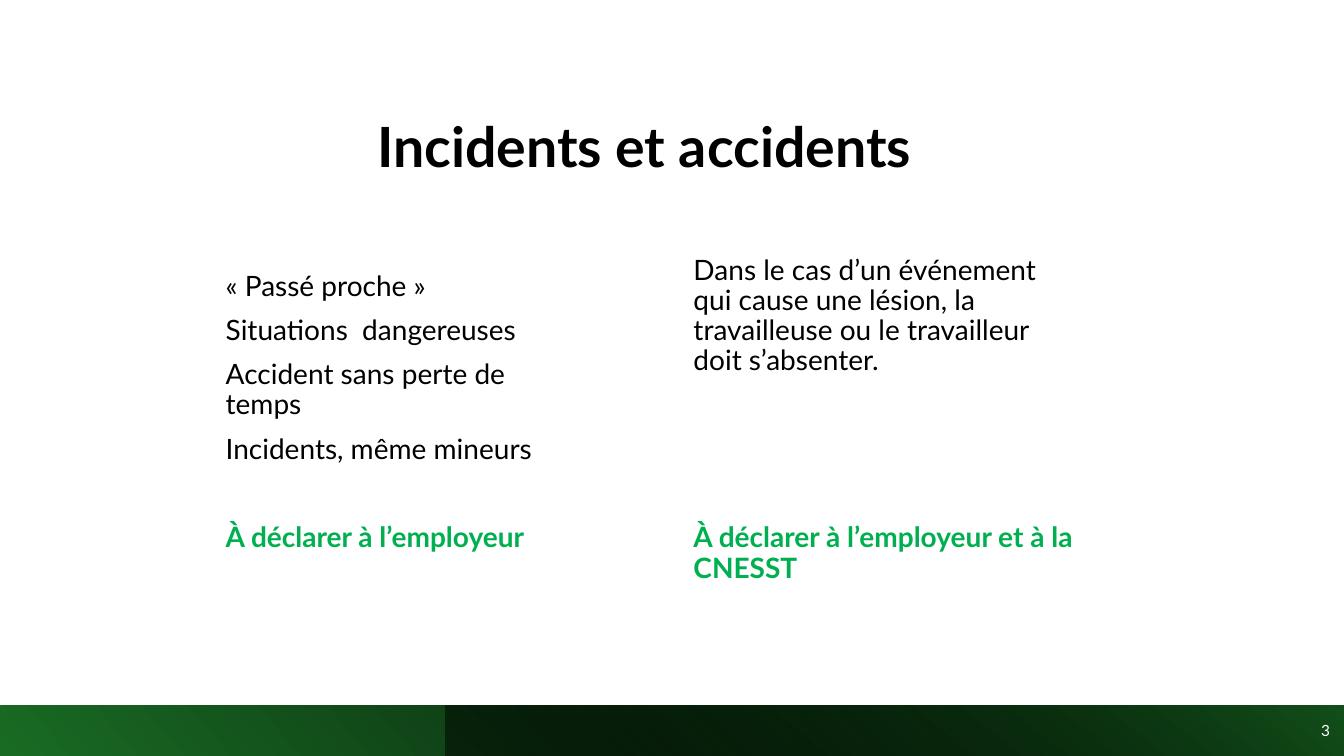
from pptx import Presentation
from pptx.dml.color import RGBColor
from pptx.enum.shapes import MSO_SHAPE
from pptx.enum.text import MSO_ANCHOR, MSO_AUTO_SIZE, PP_ALIGN
from pptx.oxml.ns import qn
from pptx.util import Inches, Pt
from lxml.etree import SubElement

BLACK = RGBColor(0x00, 0x00, 0x00)
WHITE = RGBColor(0xFF, 0xFF, 0xFF)
ACCENT = RGBColor(0x00, 0xB0, 0x50)
GREEN = RGBColor(0x19, 0x6B, 0x24)
DARK_GREEN = RGBColor(0x13, 0x50, 0x1B)


class SlideBuilder:
    """Holds the text style and the current page, and adds each kind of element."""

    font = "Lato"
    line_spacing = 0.9
    paragraph_gap = 10

    def __init__(self, page):
        self.page = page

    def place(self, box, left, top, width, height):
        box.left, box.top = Inches(left), Inches(top)
        box.width, box.height = Inches(width), Inches(height)

    def style(self, para, size, color=BLACK, bold=False, align=PP_ALIGN.LEFT):
        para.alignment = align
        para.line_spacing = self.line_spacing
        for span in para.runs:
            span.font.name = self.font
            span.font.size = Pt(size)
            span.font.bold = bold
            span.font.color.rgb = color

    def title(self, text, *position):
        box = self.page.shapes.title
        self.place(box, *position)
        frame = box.text_frame
        frame.text = text
        frame.auto_size = MSO_AUTO_SIZE.NONE
        frame.vertical_anchor = MSO_ANCHOR.BOTTOM
        self.style(frame.paragraphs[0], 39.6, bold=True)

    def text_box(self, text, *position):
        box = self.page.shapes.add_textbox(*map(Inches, position))
        frame = box.text_frame
        frame.word_wrap = True
        frame.text = text
        return frame

    def column(self, lines, conclusion, conclusion_gap, *position):
        frame = self.text_box("\n".join([*lines, conclusion]), *position)
        *body, last = frame.paragraphs
        for index, para in enumerate(body):
            para.space_before = Pt(self.paragraph_gap if index else 0)
            self.style(para, 20)
        last.space_before = Pt(conclusion_gap)
        self.style(last, 20, ACCENT, bold=True)

    def band(self, stops, angle, *position):
        band = self.page.shapes.add_shape(MSO_SHAPE.RECTANGLE, *map(Inches, position))
        band.shadow.inherit = False
        band.line.fill.background()
        band.fill.gradient()
        band.fill.gradient_angle = angle
        for stop, (offset, color, opacity) in zip(band.fill.gradient_stops, stops):
            stop.position = offset
            stop.color.rgb = color
        colors = band.element.spPr.iter(qn("a:srgbClr"))
        for element, (offset, color, opacity) in zip(colors, stops):
            if opacity < 1:
                SubElement(element, qn("a:alpha"), val=str(int(opacity * 100000)))

    def page_number(self, text, *position):
        frame = self.text_box(text, *position)
        frame.vertical_anchor = MSO_ANCHOR.MIDDLE
        self.style(frame.paragraphs[0], 11, WHITE, align=PP_ALIGN.RIGHT)


def main():
    deck = Presentation()
    deck.slide_width, deck.slide_height = Inches(13.33), Inches(7.5)
    builder = SlideBuilder(deck.slides.add_slide(deck.slide_layouts[5]))

    builder.title("Incidents et accidents", 3.64, 0.6, 6.01, 1.23)
    builder.column(
        [
            "« Passé proche »",
            "Situations  dangereuses",
            "Accident sans perte de temps",
            "Incidents, même mineurs",
        ],
        "À déclarer à l’employeur", 41.6, 2.14, 2.65, 3.77, 3.5,
    )
    builder.band([(0, GREEN, 1), (0.9, BLACK, 1)], 40, 0, 7, 13.33, 0.5)
    builder.band([(0, BLACK, 0.5), (1, DARK_GREEN, 1)], 50, 4.42, 7, 8.91, 0.5)
    builder.page_number("3", 12.8, 7.06, 0.49, 0.4)
    builder.column(
        [
            "Dans le cas d’un événement qui cause une lésion, "
            "la travailleuse ou le travailleur doit s’absenter."
        ],
        "À déclarer à l’employeur et à la CNESST", 104.8, 6.78, 2.49, 4.04, 3.5,
    )
    deck.save("out.pptx")


if __name__ == "__main__":
    main()
